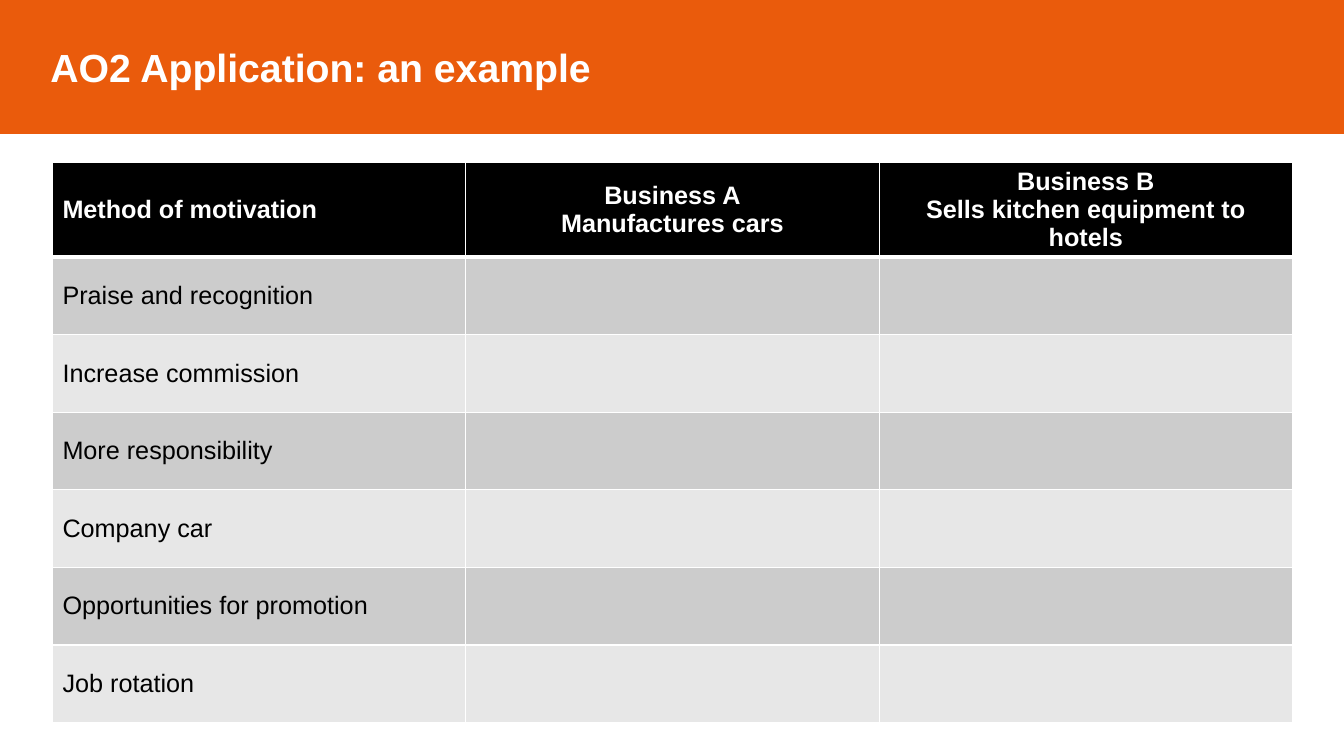
from dataclasses import dataclass

from lxml import etree
from pptx import Presentation
from pptx.dml.color import RGBColor as Color
from pptx.enum.text import MSO_ANCHOR as Anchor, MSO_AUTO_SIZE as AutoSize, PP_ALIGN as Align
from pptx.oxml.ns import qn
from pptx.util import Inches, Pt


@dataclass(frozen=True)
class Theme:
    font: str = "Arial"
    title_size: int = 28
    table_size: int = 18
    orange: str = "EA5B0C"
    white: str = "FFFFFF"
    black: str = "000000"
    bands: tuple = ("CCCCCC", "E7E7E7")


class SlideBuilder:
    def __init__(self, page, theme):
        self.page = page
        self.theme = theme

    def add_span(self, para, text, size, color, bold):
        span = para.add_run()
        span.text = text
        span.font.name = self.theme.font
        span.font.size = Pt(size)
        span.font.bold = bold
        span.font.color.rgb = Color.from_string(color)

    def title_band(self, text, width, height):
        box = self.page.shapes.title
        box.left, box.top, box.width, box.height = 0, 0, Inches(width), Inches(height)
        orange = Color.from_string(self.theme.orange)
        box.fill.solid()
        box.fill.fore_color.rgb = orange
        box.line.color.rgb = orange
        box.line.width = Pt(1)
        frame = box.text_frame
        frame.auto_size = AutoSize.NONE
        frame.word_wrap = True
        frame.vertical_anchor = Anchor.MIDDLE
        frame.margin_left = Inches(0.5)
        para = frame.paragraphs[0]
        para.alignment = Align.LEFT
        self.add_span(para, text, self.theme.title_size, self.theme.white, True)

    def cell_borders(self, cell, widths):
        properties = cell._tc.get_or_add_tcPr()
        for position, (side, points) in enumerate(widths.items()):
            line = etree.Element(qn(f"a:ln{side}"), w=str(Pt(points)))
            fill = etree.SubElement(line, qn("a:solidFill"))
            etree.SubElement(fill, qn("a:srgbClr"), val=self.theme.white)
            properties.insert(position, line)

    def fill_cell(self, cell, lines, fill, color, bold, align):
        cell.fill.solid()
        cell.fill.fore_color.rgb = Color.from_string(fill)
        cell.vertical_anchor = Anchor.MIDDLE
        frame = cell.text_frame
        for index, text in enumerate(lines):
            para = frame.add_paragraph() if index else frame.paragraphs[0]
            para.alignment = align
            self.add_span(para, text, self.theme.table_size, color, bold)

    def table(self, left, top, column_width, header_height, row_height, header, labels):
        theme = self.theme
        rows, columns = len(labels) + 1, len(header)
        height = header_height + row_height * len(labels)
        table = self.page.shapes.add_table(
            rows, columns, Inches(left), Inches(top),
            Inches(column_width * columns), Inches(height)).table
        table.horz_banding = False
        for column in table.columns:
            column.width = Inches(column_width)
        for index, row in enumerate(table.rows):
            row.height = Inches(row_height if index else header_height)
            for position, cell in enumerate(row.cells):
                if index == 0:
                    align = Align.CENTER if position else Align.LEFT
                    self.fill_cell(cell, header[position], theme.black, theme.white, True, align)
                else:
                    lines = [] if position else [labels[index - 1]]
                    band = theme.bands[(index - 1) % 2]
                    self.fill_cell(cell, lines, band, theme.black, False, Align.LEFT)
                # A heavier rule separates the header from the body
                self.cell_borders(cell, {"L": 1, "R": 1, "T": 3 if index == 1 else 1,
                                         "B": 1 if index else 3})


def main():
    deck = Presentation()
    deck.slide_width, deck.slide_height = Inches(13.33), Inches(7.5)
    page = deck.slides.add_slide(deck.slide_layouts[5])
    builder = SlideBuilder(page, Theme())

    # Title band
    builder.title_band("AO2 Application: an example", 13.33, 1.32)

    # Motivation methods by business
    header = [
        ["Method of motivation"],
        ["Business A", "Manufactures cars"],
        ["Business B", "Sells kitchen equipment to hotels"],
    ]
    methods = [
        "Praise and recognition", "Increase commission", "More responsibility",
        "Company car", "Opportunities for promotion", "Job rotation",
    ]
    builder.table(0.52, 1.61, 4.1, 0.81, 0.77, header, methods)

    deck.save("out.pptx")


if __name__ == "__main__":
    main()
